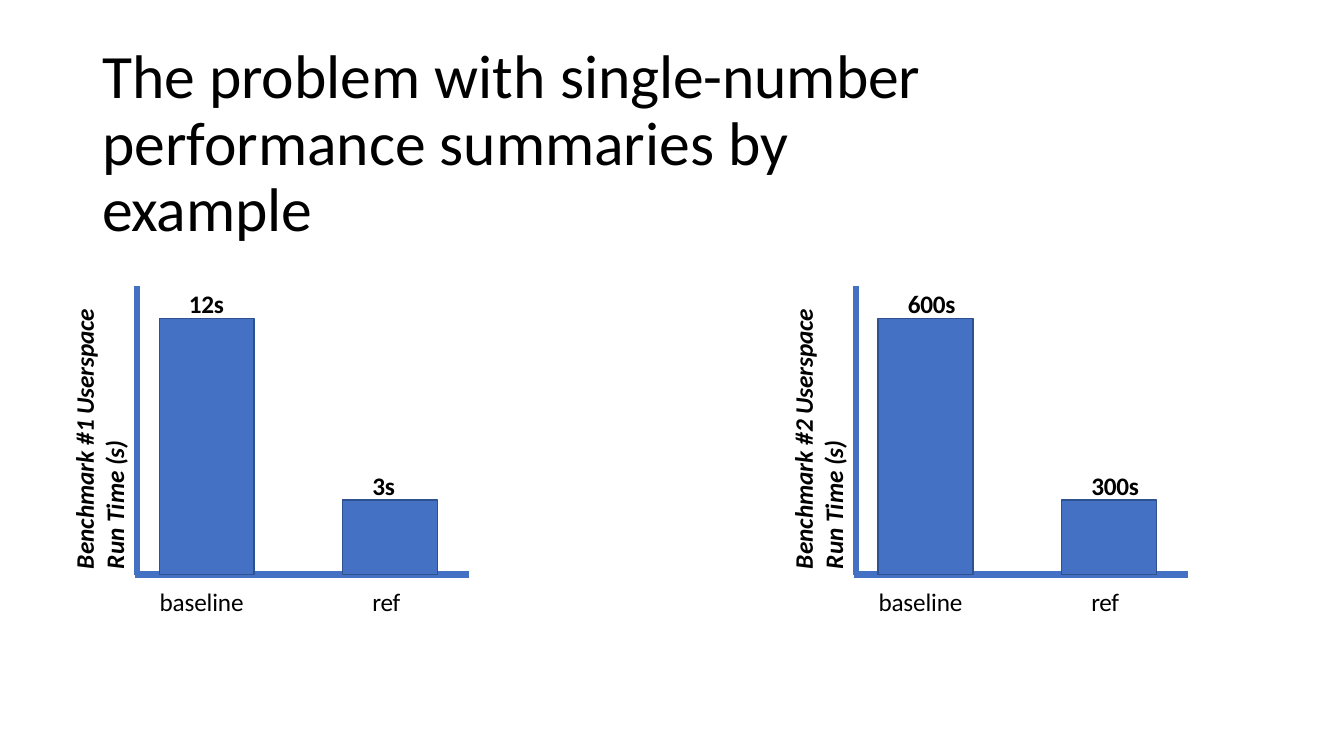
from dataclasses import dataclass
from pptx import Presentation
from pptx.dml.color import RGBColor
from pptx.enum.shapes import MSO_SHAPE
from pptx.util import Inches, Pt

# Content: runs are (text, letter spacing in points)
TITLE = [("The problem with ", 0), ("single-number ", -0.1),
         ("performance summaries by ", 0), ("example", -0.2)]
# Values: text and label width
BENCHMARKS = [
    {"name": "Benchmark #1 ", "values": [("12s", 0.38), ("3s", 0.25)]},
    {"name": "Benchmark #2 ", "values": [("600s", 0.51), ("300s", 0.51)]},
]
# Bars: name, letter spacing, name width, bar left, bar height, value left, name left
BARS = [
    ("baseline", -0.1, 0.87, 0.24, 2.54, 0.52, 0.23),
    ("ref", -0.2, 0.31, 2.06, 0.74, 2.34, 2.34),
]


@dataclass(frozen=True)
class Theme:
    font: str = "Calibri"
    ink: RGBColor = RGBColor(0, 0, 0)
    bar: RGBColor = RGBColor(0x44, 0x71, 0xC4)
    edge: RGBColor = RGBColor(0x2E, 0x52, 0x8F)
    title_size: float = 44
    label_size: float = 18
    axis_width: float = 4.5
    edge_width: float = 1


THEME = Theme()

# Layout in inches
FIRST_LEFT, CHART_STEP = 1.34, 7.13
AXIS_TOP, BASE, AXIS_LENGTH = 2.84, 5.7, 3.31
AXIS_INSET = 0.02
BAR_WIDTH = 0.94
LABEL_HEIGHT, VALUE_RISE, NAME_TOP = 0.33, 0.31, 5.8

deck = Presentation()
deck.slide_width, deck.slide_height = Inches(13.33), Inches(7.5)
page = deck.slides.add_slide(deck.slide_layouts[6])


def add_text(left, top, width, height, lines, size, bold=False, italic=False,
             inset=Pt(1), before=1, spacing=None, upward=False):
    box = page.shapes.add_textbox(Inches(left), Inches(top), Inches(width), Inches(height))
    frame = box.text_frame
    frame.word_wrap = True
    frame.margin_left = frame.margin_right = frame.margin_bottom = 0
    frame.margin_top = inset
    if upward:
        frame._txBody.bodyPr.set("vert", "vert270")
    for index, runs in enumerate(lines):
        para = frame.add_paragraph() if index else frame.paragraphs[0]
        para.space_before = Pt(before)
        para._p.get_or_add_pPr().set("marL", str(Pt(1)))
        if spacing and index == 0:
            para.line_spacing = Pt(spacing)
        for text, tracking in runs:
            span = para.add_run()
            span.text = text
            font = span.font
            font.name, font.size = THEME.font, Pt(size)
            font.bold, font.italic = bold, italic
            font.color.rgb = THEME.ink
            if tracking:
                span._r.get_or_add_rPr().set("spc", str(round(tracking * 100)))


def add_axes(left):
    upright = Inches(left + AXIS_INSET)
    outline = page.shapes.build_freeform(Inches(left), Inches(BASE))
    outline.add_line_segments([(Inches(left + AXIS_LENGTH), Inches(BASE))], close=False)
    outline.move_to(upright, Inches(BASE))
    outline.add_line_segments([(upright, Inches(AXIS_TOP))], close=False)
    axes = outline.convert_to_shape()
    axes.shadow.inherit = False
    axes.fill.background()
    axes.line.color.rgb = THEME.bar
    axes.line.width = Pt(THEME.axis_width)


def add_bar(left, height):
    bar = page.shapes.add_shape(
        MSO_SHAPE.RECTANGLE, Inches(left), Inches(BASE - height),
        Inches(BAR_WIDTH), Inches(height))
    bar.shadow.inherit = False
    bar.fill.solid()
    bar.fill.fore_color.rgb = THEME.bar
    bar.line.color.rgb = THEME.edge
    bar.line.width = Pt(THEME.edge_width)


# Title
add_text(1, 0.34, 8.97, 1.42, [TITLE], THEME.title_size,
         inset=Inches(0.1), before=7, spacing=47.5)

# One bar diagram per benchmark
for number, benchmark in enumerate(BENCHMARKS):
    origin = FIRST_LEFT + number * CHART_STEP
    add_axes(origin)

    axis_title = [[(benchmark["name"], 0), ("Userspace", -0.1)],
                  [("Run Time ", 0), ("(s)", -0.2)]]
    add_text(origin - 0.61, 3.03, 0.58, 2.63, axis_title, THEME.label_size,
             bold=True, italic=True, inset=0, before=0, spacing=18.1, upward=True)

    # Bars with value above and name below
    for (value, value_width), bar in zip(benchmark["values"], BARS):
        name, tracking, name_width, bar_left, height, value_left, name_left = bar
        add_bar(origin + bar_left, height)
        add_text(origin + value_left, BASE - height - VALUE_RISE, value_width, LABEL_HEIGHT,
                 [[(value, -0.2)]], THEME.label_size, bold=True)
        add_text(origin + name_left, NAME_TOP, name_width, LABEL_HEIGHT,
                 [[(name, tracking)]], THEME.label_size)

deck.save("out.pptx")
